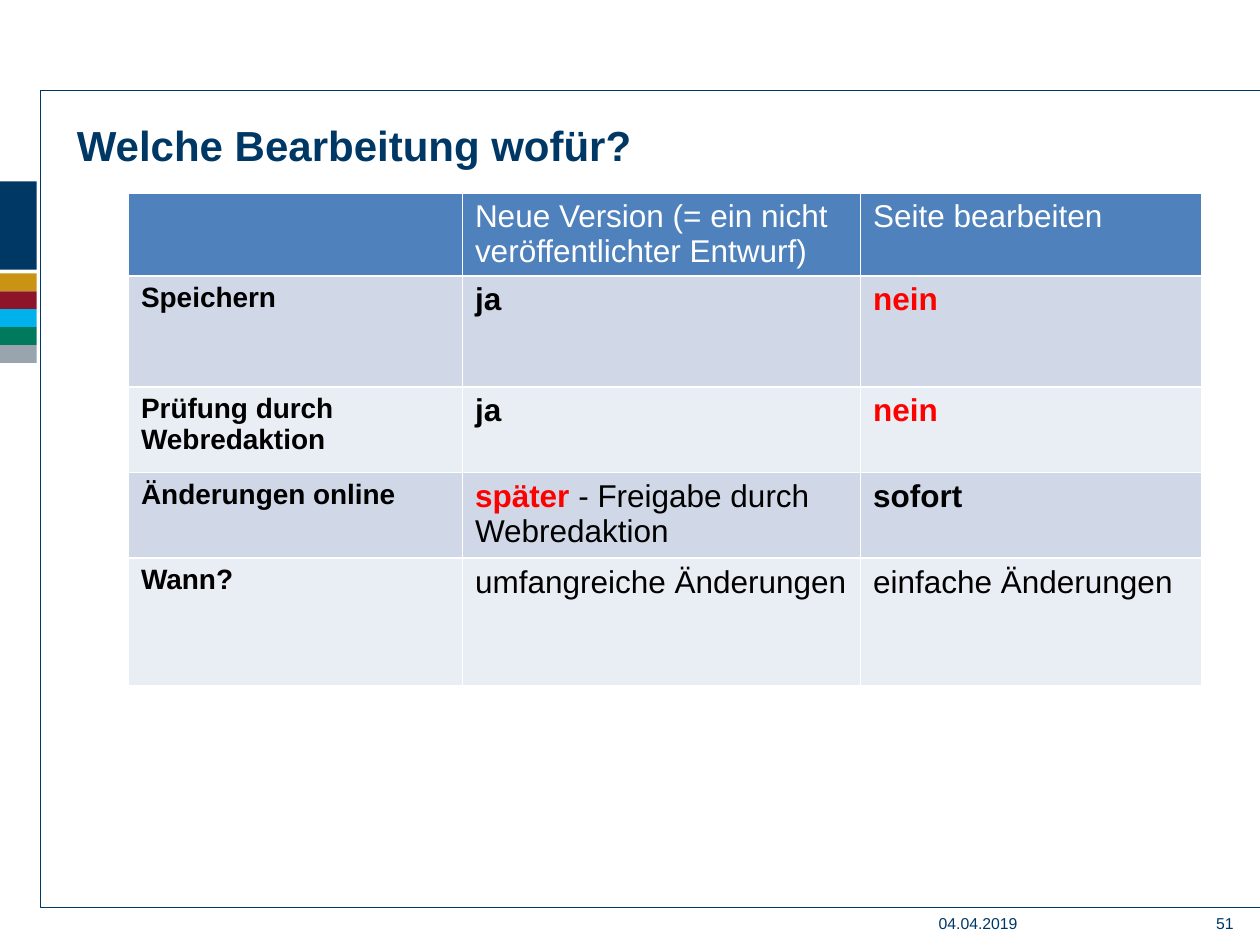
from lxml.etree import SubElement
from pptx import Presentation
from pptx.dml.color import RGBColor
from pptx.enum.shapes import MSO_SHAPE
from pptx.enum.text import MSO_ANCHOR, MSO_AUTO_SIZE, PP_ALIGN
from pptx.oxml import parse_xml
from pptx.oxml.ns import nsdecls, qn
from pptx.util import Inches, Pt

COLORS = {
    "navy": "003865", "gold": "C99313", "wine": "8D1429", "cyan": "00B1EB",
    "green": "007A5D", "gray": "98A4AE", "header": "4F81BD",
    "dark_band": "D0D8E8", "light_band": "E9EDF4",
    "white": "FFFFFF", "black": "000000", "red": "FF0000",
}
FONT = "Arial"
UNIT = 0.1  # the slide is a grid of 100 columns by 75 rows
COLUMNS, ROWS = 100, 75


def grid(count):
    return Inches(count * UNIT)


def rgb(name):
    return RGBColor.from_string(COLORS[name])


class SlideBuilder:
    def __init__(self, slide):
        self.slide = slide
        self.shapes = slide.shapes

    def style(self, span, size, color, bold=False):
        font = span.font
        font.name, font.size, font.bold = FONT, Pt(size), bold
        font.color.rgb = rgb(color)

    def frame(self, text_frame, anchor=MSO_ANCHOR.TOP):
        text_frame.word_wrap = True
        text_frame.auto_size = MSO_AUTO_SIZE.NONE
        text_frame.vertical_anchor = anchor
        text_frame.margin_left = text_frame.margin_right = 0
        text_frame.margin_top = text_frame.margin_bottom = 0

    def title(self, text, left, top, width, height):
        title = self.shapes.title
        title.left, title.top = grid(left), grid(top)
        title.width, title.height = grid(width), grid(height)
        title.text_frame.text = text
        self.frame(title.text_frame)
        para = title.text_frame.paragraphs[0]
        para.alignment = PP_ALIGN.LEFT
        self.style(para.runs[0], 24, "navy", bold=True)

    def bar(self, color, left, top, width, height):
        bar = self.shapes.add_shape(
            MSO_SHAPE.RECTANGLE, grid(left), grid(top), grid(width), grid(height))
        bar.shadow.inherit = False
        bar.fill.solid()
        bar.fill.fore_color.rgb = rgb(color)
        bar.line.fill.background()

    def outline(self, points, color, weight):
        corners = [(grid(x), grid(y)) for x, y in points]
        builder = self.shapes.build_freeform(*corners[0])
        builder.add_line_segments(corners[1:], close=False)
        outline = builder.convert_to_shape()
        outline.shadow.inherit = False
        outline.fill.background()
        outline.line.color.rgb = rgb(color)
        outline.line.width = Pt(weight)

    def label(self, text, left, top, width, height, align=PP_ALIGN.LEFT):
        box = self.shapes.add_textbox(grid(left), grid(top), grid(width), grid(height))
        box.text_frame.text = text
        self.frame(box.text_frame)
        para = box.text_frame.paragraphs[0]
        para.alignment = align
        self.style(para.runs[0], 9, "navy")

    def cell_borders(self, cell, color, weight):
        properties = cell._tc.get_or_add_tcPr()
        for place, side in enumerate(("lnL", "lnR", "lnT", "lnB")):
            line = parse_xml(f'<a:{side} {nsdecls("a")} w="{Pt(weight)}"/>')
            fill = SubElement(line, qn("a:solidFill"))
            SubElement(fill, qn("a:srgbClr"), val=COLORS[color])
            properties.insert(place, line)

    def table(self, rows, left, top, widths, heights):
        frame = self.shapes.add_table(
            len(rows), len(widths), grid(left), grid(top),
            grid(sum(widths)), grid(sum(heights)))
        table = frame.table
        table.horz_banding = False
        for column, width in zip(table.columns, widths):
            column.width = grid(width)
        for row, height in zip(table.rows, heights):
            row.height = grid(height)
        for row_index, row in enumerate(rows):
            band = "dark_band" if row_index % 2 else "light_band"
            for column_index, spans in enumerate(row):
                cell = table.cell(row_index, column_index)
                cell.fill.solid()
                cell.fill.fore_color.rgb = rgb(band if row_index else "header")
                self.cell_borders(cell, "white", 1)
                para = cell.text_frame.paragraphs[0]
                for text, size, color, bold in spans:
                    span = para.add_run()
                    span.text = text
                    self.style(span, size, color, bold)


def heading(text):
    return [(text, 18, "white", False)]


def topic(text):
    return [(text, 16, "black", True)]


def answer(text, color="black"):
    return [(text, 18, color, True)]


def plain(text):
    return [(text, 18, "black", False)]


def main():
    deck = Presentation()
    deck.slide_width, deck.slide_height = grid(COLUMNS), grid(ROWS)
    page = SlideBuilder(deck.slides.add_slide(deck.slide_layouts[5]))

    # Colour bars on the left edge
    page.bar("navy", 0, 14.4, 2.9, 7)
    stripe = 1.42
    for index, color in enumerate(("gold", "wine", "cyan", "green", "gray")):
        page.bar(color, 0, 21.7 + index * stripe, 2.9, stripe)

    # Frame, open to the right
    page.outline([(COLUMNS, 7.2), (3.2, 7.2), (3.2, 72), (COLUMNS, 72)], "navy", 0.75)

    # Footer
    page.label("04.04.2019", 74.5, 72.5, 11.8, 2.1)
    page.label("51", 90, 72.5, 7.9, 2.1, PP_ALIGN.RIGHT)

    # Title
    page.title("Welche Bearbeitung wofür?", 6.1, 9.5, 91.2, 4.5)

    # Comparison table
    rows = [
        [[], heading("Neue Version (= ein nicht veröffentlichter Entwurf)"),
         heading("Seite bearbeiten")],
        [topic("Speichern"), answer("ja"), answer("nein", "red")],
        [topic("Prüfung durch Webredaktion"), answer("ja"), answer("nein", "red")],
        [topic("Änderungen online"),
         answer("später", "red") + plain(" - Freigabe durch Webredaktion"),
         answer("sofort")],
        [topic("Wann?"), plain("umfangreiche Änderungen"), plain("einfache Änderungen")],
    ]
    page.table(rows, 10.2, 15.3, widths=(26.5, 31.6, 27.1),
               heights=(6.6, 8.8, 6.8, 6.8, 10.1))

    deck.save("out.pptx")


if __name__ == "__main__":
    main()
